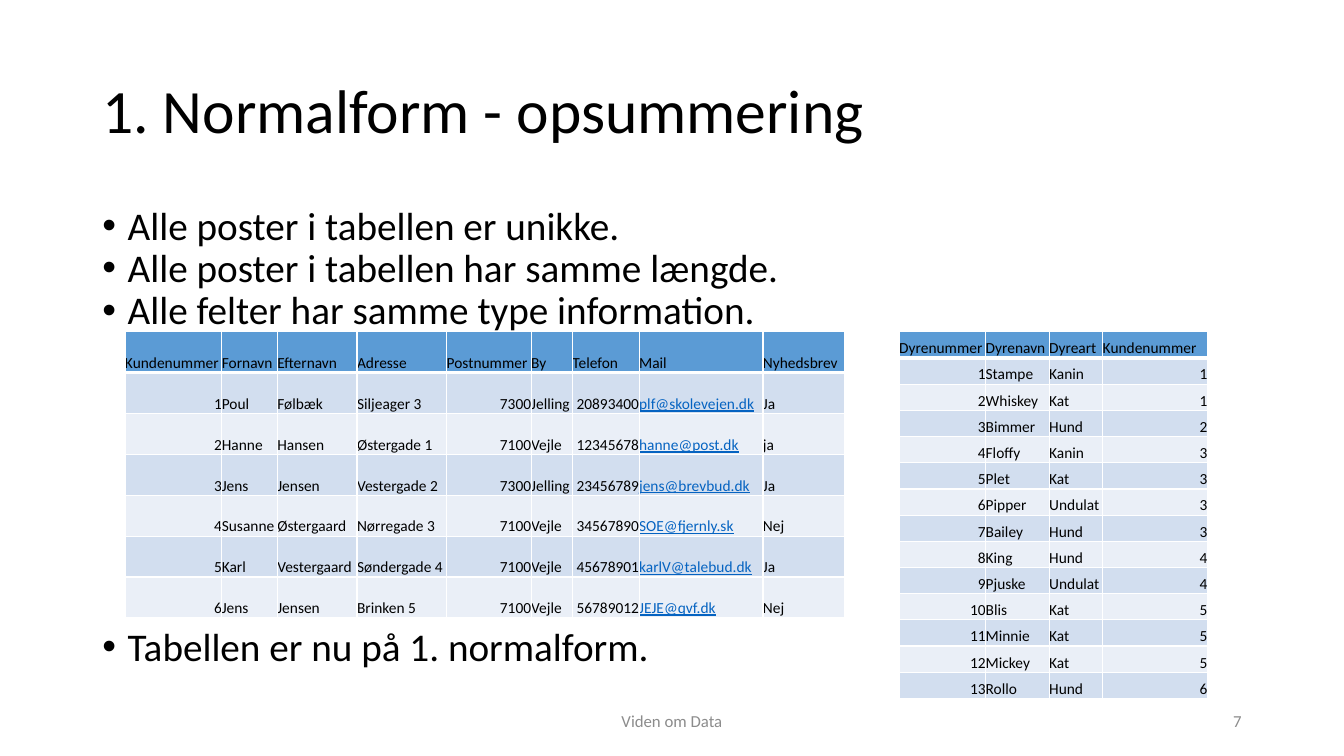
from lxml.etree import SubElement
from pptx import Presentation
from pptx.dml.color import RGBColor
from pptx.enum.text import MSO_ANCHOR, PP_ALIGN
from pptx.oxml.ns import qn
from pptx.util import Cm, Pt


def color(hex_string):
    return RGBColor.from_string(hex_string)


def add_run(para, text, size, hex_string="000000"):
    span = para.add_run()
    span.text = text
    span.font.name = "Calibri"
    span.font.size = Pt(size)
    span.font.color.rgb = color(hex_string)
    return span


deck = Presentation()
deck.slide_width, deck.slide_height = Cm(33.87), Cm(19.05)
page = deck.slides.add_slide(deck.slide_layouts[6])

# Title, footer and page number
single_lines = [
    ("1. Normalform - opsummering", 2.33, 1.01, 29.21, 3.68, 44, "000000", PP_ALIGN.LEFT),
    ("Viden om Data", 11.22, 17.66, 11.43, 1.01, 12, "8C8C8C", PP_ALIGN.CENTER),
    ("7", 23.92, 17.66, 7.62, 1.01, 12, "8C8C8C", PP_ALIGN.RIGHT),
]
for text, left, top, width, height, size, ink, align in single_lines:
    box = page.shapes.add_textbox(Cm(left), Cm(top), Cm(width), Cm(height))
    box.text_frame.word_wrap = True
    box.text_frame.vertical_anchor = MSO_ANCHOR.MIDDLE
    para = box.text_frame.paragraphs[0]
    para.alignment = align
    para.line_spacing = 0.9 if size == 44 else 1.0
    add_run(para, text, size, ink)

# Bullets, with room for the tables before the last one
bullets = [
    ("Alle poster i tabellen er unikke.", 0),
    ("Alle poster i tabellen har samme længde.", 0),
    ("Alle felter har samme type information.", 0),
    ("Tabellen er nu på 1. normalform.", 210),
]
box = page.shapes.add_textbox(Cm(2.33), Cm(5.07), Cm(29.21), Cm(12.09))
frame = box.text_frame
frame.word_wrap = True
for index, (text, gap) in enumerate(bullets):
    para = frame.add_paragraph() if index else frame.paragraphs[0]
    para.line_spacing = 0.9
    para.space_before = Pt(gap)
    add_run(para, text, 28)
    properties = para._p.get_or_add_pPr()
    properties.set("marL", str(Cm(0.64)))
    properties.set("indent", str(Cm(-0.64)))
    SubElement(properties, qn("a:buFont"), typeface="Arial")
    SubElement(properties, qn("a:buChar"), char="•")

# Table contents
customers = [
    ["Kundenummer", "Fornavn", "Efternavn", "Adresse", "Postnummer", "By",
     "Telefon", "Mail", "Nyhedsbrev"],
    ["1", "Poul", "Følbæk", "Siljeager 3", "7300", "Jelling",
     "20893400", "plf@skolevejen.dk", "Ja"],
    ["2", "Hanne", "Hansen", "Østergade 1", "7100", "Vejle",
     "12345678", "hanne@post.dk", "ja"],
    ["3", "Jens", "Jensen", "Vestergade 2", "7300", "Jelling",
     "23456789", "jens@brevbud.dk", "Ja"],
    ["4", "Susanne", "Østergaard", "Nørregade 3", "7100", "Vejle",
     "34567890", "SOE@fjernly.sk", "Nej"],
    ["5", "Karl", "Vestergaard", "Søndergade 4", "7100", "Vejle",
     "45678901", "karlV@talebud.dk", "Ja"],
    ["6", "Jens", "Jensen", "Brinken 5", "7100", "Vejle",
     "56789012", "JEJE@qvf.dk", "Nej"],
]
animals = [
    ["Dyrenummer", "Dyrenavn", "Dyreart", "Kundenummer"],
    ["1", "Stampe", "Kanin", "1"],
    ["2", "Whiskey", "Kat", "1"],
    ["3", "Bimmer", "Hund", "2"],
    ["4", "Floffy", "Kanin", "3"],
    ["5", "Plet", "Kat", "3"],
    ["6", "Pipper", "Undulat", "3"],
    ["7", "Bailey", "Hund", "3"],
    ["8", "King", "Hund", "4"],
    ["9", "Pjuske", "Undulat", "4"],
    ["10", "Blis", "Kat", "5"],
    ["11", "Minnie", "Kat", "5"],
    ["12", "Mickey", "Kat", "5"],
    ["13", "Rollo", "Hund", "6"],
]
customer_widths = [2.44, 1.4, 2.01, 2.26, 2.13, 1.04, 1.68, 3.12, 2.06]
animal_widths = [2.18, 1.6, 1.35, 2.64]

# Tables: header row, then alternating bands with white rules
for records, left, widths, row_height in [
    (customers, 3.15, customer_widths, 1.03),
    (animals, 22.66, animal_widths, 0.66),
]:
    table = page.shapes.add_table(
        len(records), len(widths), Cm(left), Cm(8.36),
        Cm(sum(widths)), Cm(row_height * len(records))).table
    for column, width in zip(table.columns, widths):
        column.width = Cm(width)
    for row_index, record in enumerate(records):
        table.rows[row_index].height = Cm(row_height)
        band = "D2DEEF" if row_index % 2 else "EAEFF7"
        for column_index, text in enumerate(record):
            cell = table.cell(row_index, column_index)
            cell.margin_left = cell.margin_right = cell.margin_top = cell.margin_bottom = 0
            cell.vertical_anchor = MSO_ANCHOR.BOTTOM
            para = cell.text_frame.paragraphs[0]
            para.alignment = PP_ALIGN.RIGHT if text.isdigit() else PP_ALIGN.LEFT
            is_mail = "@" in text
            span = add_run(para, text, 11, "0563C1" if is_mail else "000000")
            span.font.bold = False
            span.font.underline = is_mail
            # Borders go before the fill in the cell properties
            for side in ("L", "R", "T", "B"):
                below_header = (row_index, side) in [(0, "B"), (1, "T")]
                line = SubElement(cell._tc.get_or_add_tcPr(), qn(f"a:ln{side}"),
                                  w=str(Pt(3 if below_header else 1)))
                SubElement(SubElement(line, qn("a:solidFill")), qn("a:srgbClr"), val="FFFFFF")
            cell.fill.solid()
            cell.fill.fore_color.rgb = color(band if row_index else "5B9BD5")

deck.save("out.pptx")
